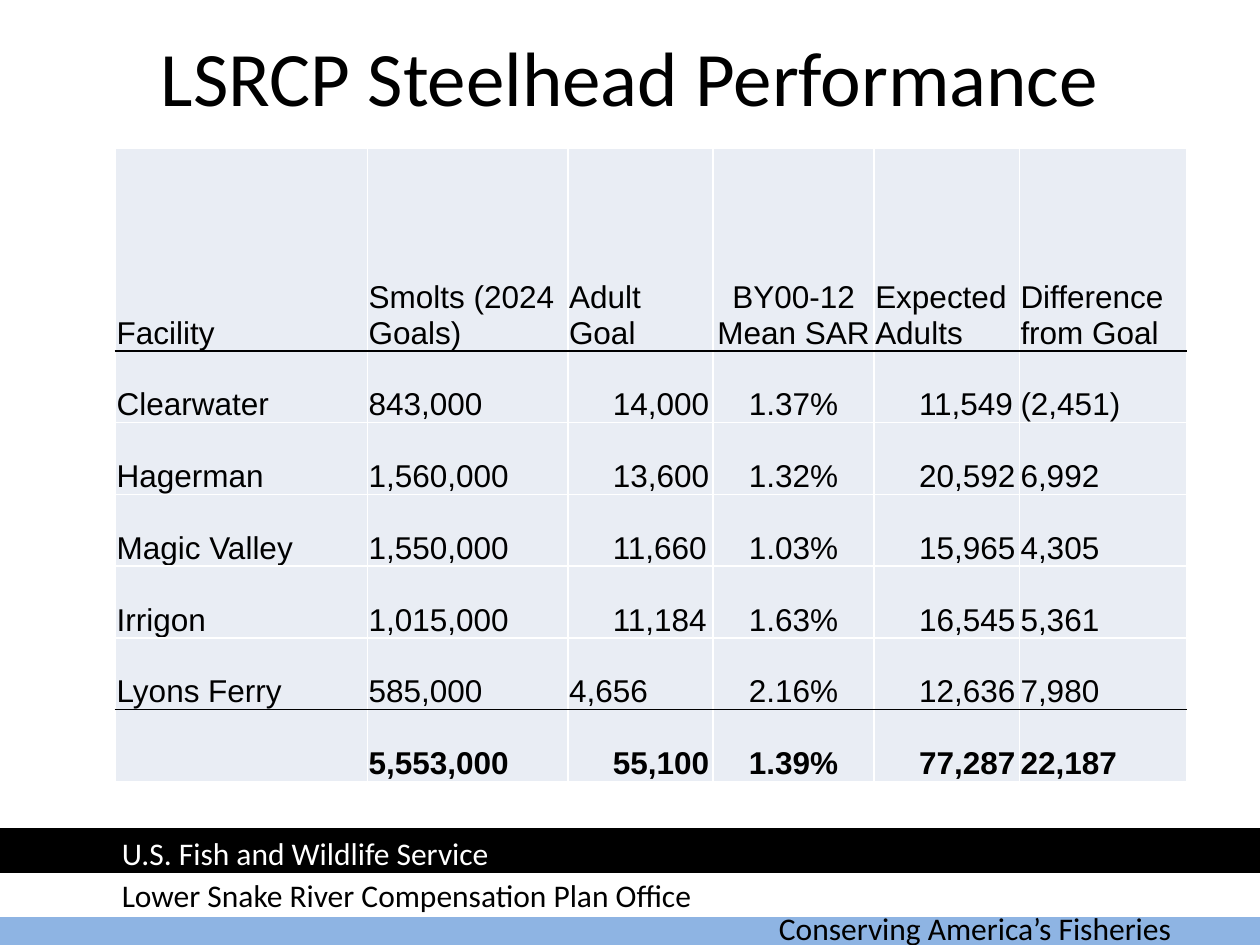
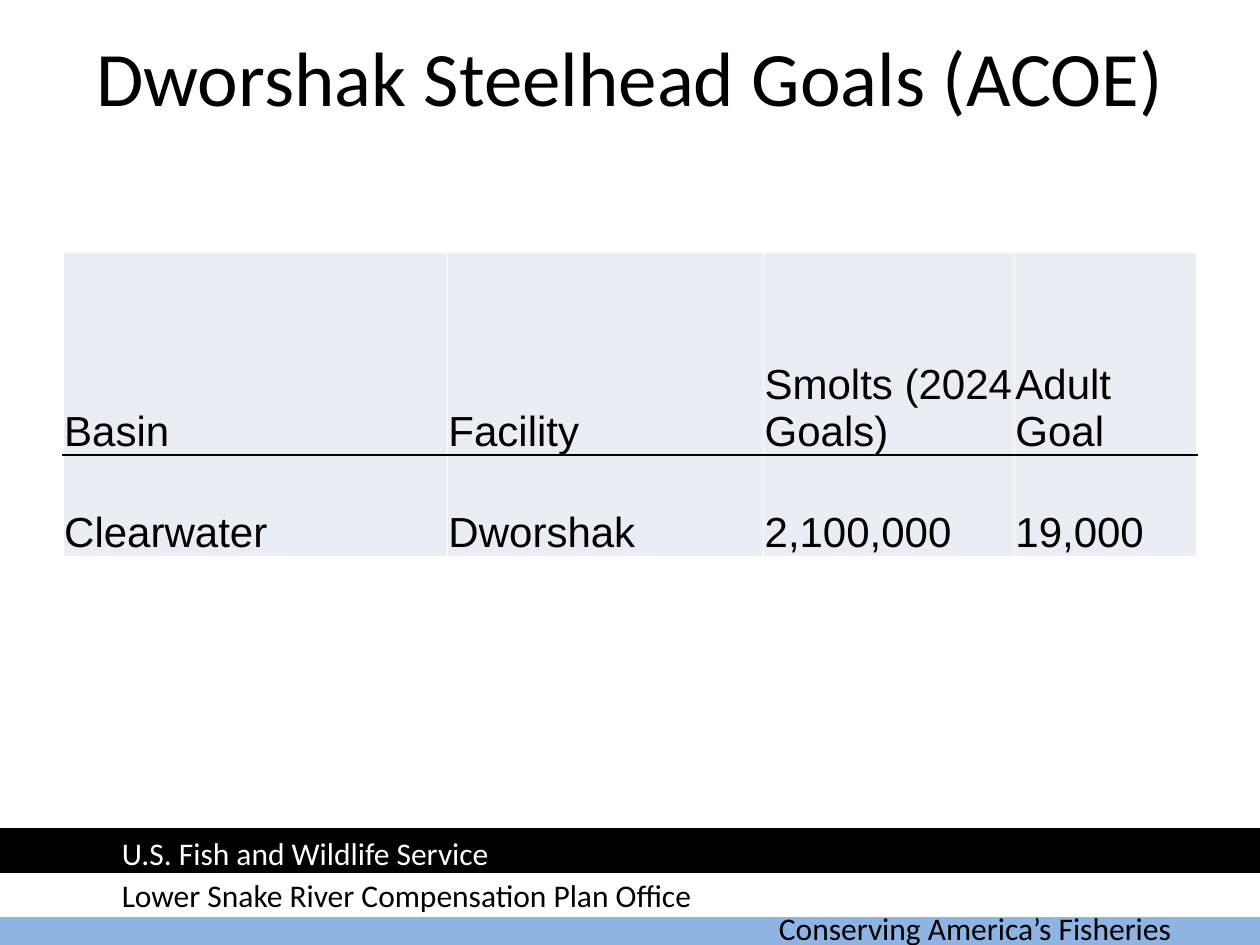
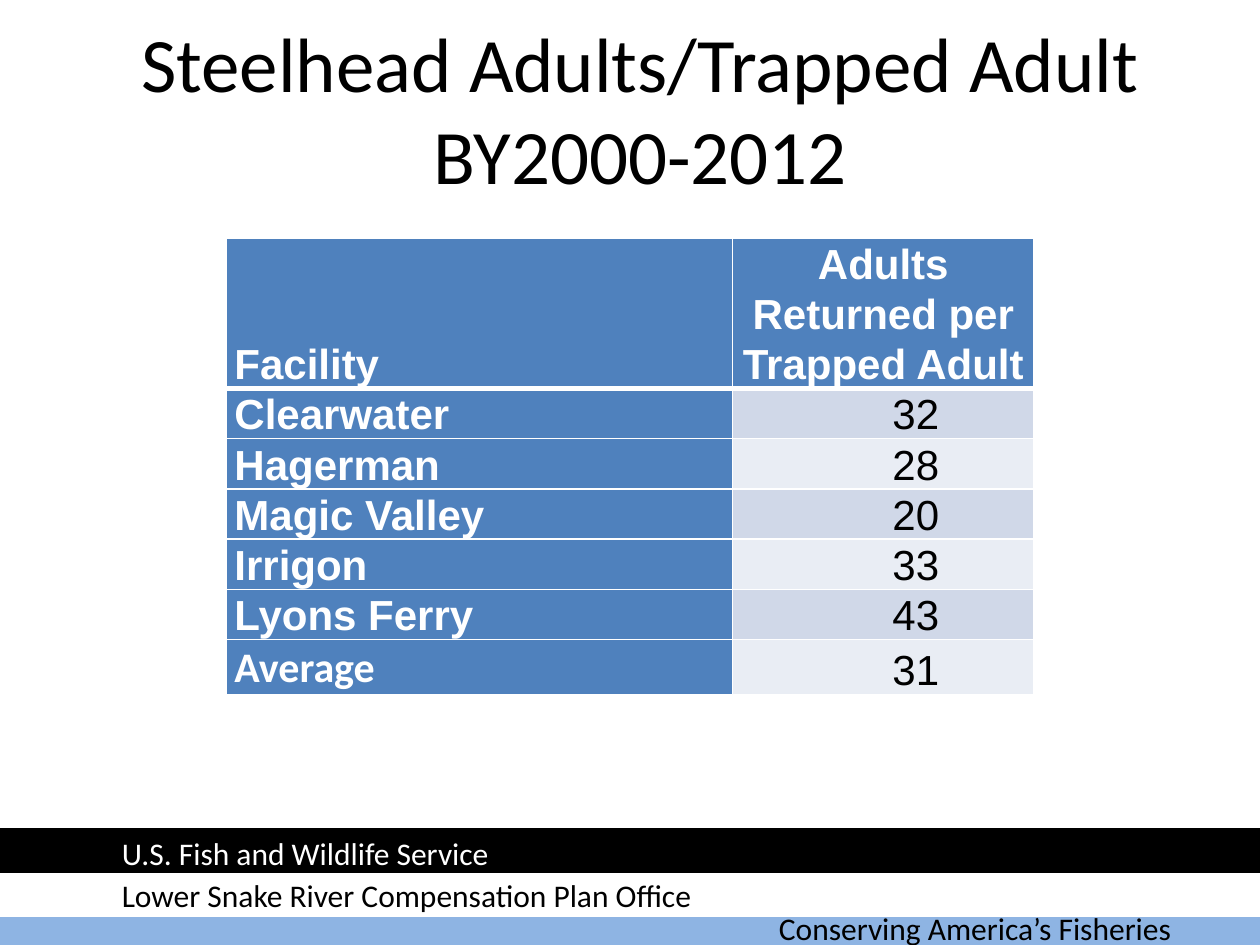
from dataclasses import dataclass, replace
from typing import Any, Callable, NamedTuple

import lxml.etree
import pptx
import pptx.dml.color
import pptx.enum.shapes
import pptx.enum.text
import pptx.oxml.ns
import pptx.util

Pt = pptx.util.Pt
RGBColor = pptx.dml.color.RGBColor
Align = pptx.enum.text.PP_ALIGN
Anchor = pptx.enum.text.MSO_ANCHOR
AutoSize = pptx.enum.text.MSO_AUTO_SIZE

BLACK = RGBColor(0x00, 0x00, 0x00)
WHITE = RGBColor(0xFF, 0xFF, 0xFF)
SKY = RGBColor(0x8E, 0xB4, 0xE3)
BLUE = RGBColor(0x4F, 0x81, 0xBD)
PALE = RGBColor(0xE9, 0xED, 0xF4)
MIST = RGBColor(0xD0, 0xD8, 0xE8)
HEADING_FONT = "Calibri"
TABLE_FONT = "Arial"
TITLE_ONLY = 5


class Box(NamedTuple):
    left: float
    top: float
    width: float
    height: float

    def lengths(self) -> list[int]:
        return [Pt(value) for value in self]


class Band(NamedTuple):
    box: Box
    color: RGBColor


class Label(NamedTuple):
    text: str
    box: Box
    color: RGBColor


class Rule(NamedTuple):
    color: RGBColor
    width: float


@dataclass(frozen=True)
class CellStyle:
    size: float
    fill: RGBColor = PALE
    color: RGBColor = BLACK
    font: str = TABLE_FONT
    bold: bool = False
    align: Align = Align.LEFT
    indent: float = 0
    line_spacing: float = 1.0
    margins: tuple[float, float] = (0.7, 0.7)


@dataclass(frozen=True)
class TableSlide:
    title: str
    title_box: Box
    left: float
    top: float
    widths: list[float]
    heights: list[float]
    rows: list[list[str]]
    rules: dict[int, Rule]
    style: Callable[[int, int, str], CellStyle]


BANDS = [
    Band(Box(-0.5, 516, 720, 24), SKY),
    Band(Box(0, 499, 720, 24), WHITE),
    Band(Box(0, 474, 720, 24), BLACK),
]
LABELS = [
    Label("Conserving America’s Fisheries", Box(438, 516, 264, 29), BLACK),
    Label("U.S. Fish and Wildlife Service", Box(62.5, 473, 300, 29), WHITE),
    Label("Lower Snake River Compensation Plan Office", Box(62.5, 497, 358, 29), BLACK),
]
TITLE_BOX = Box(36, 12, 648, 63)
GRID_RULE = Rule(WHITE, 1)
BLACK_RULE = Rule(BLACK, 1)
HEADER_RULE = Rule(WHITE, 3)


def performance_style(row: int, column: int, text: str) -> CellStyle:
    indented = row > 0 and column in (2, 4) and len(text) == len("14,000")
    return CellStyle(
        size=18,
        bold=row == 6,
        align=Align.CENTER if column == 3 else Align.LEFT,
        indent=25 if indented else 0,
    )


def goals_style(row: int, column: int, text: str) -> CellStyle:
    return CellStyle(size=24)


def trapped_style(row: int, column: int, text: str) -> CellStyle:
    base = CellStyle(size=24, line_spacing=1.07, margins=(5, 0))
    if row and column:
        return replace(base, fill=MIST if row % 2 else PALE, indent=86.5)
    return replace(
        base,
        fill=BLUE,
        color=WHITE,
        bold=True,
        font=HEADING_FONT if text == "Average" else TABLE_FONT,
        align=Align.CENTER if column else Align.LEFT,
    )


TABLE_SLIDES = [
    TableSlide(
        title="LSRCP Steelhead Performance",
        title_box=TITLE_BOX,
        left=66,
        top=84.5,
        widths=[144, 114.5, 83, 92, 83, 95.5],
        heights=[116] + [41] * 6,
        rows=[
            ["Facility", "Smolts (2024 Goals)", "Adult Goal", "BY00-12 Mean SAR",
             "Expected Adults", "Difference from Goal"],
            ["Clearwater", "843,000", "14,000", "1.37%", "11,549", "(2,451)"],
            ["Hagerman", "1,560,000", "13,600", "1.32%", "20,592", "6,992"],
            ["Magic Valley", "1,550,000", "11,660", "1.03%", "15,965", "4,305"],
            ["Irrigon", "1,015,000", "11,184", "1.63%", "16,545", "5,361"],
            ["Lyons Ferry", "585,000", "4,656", "2.16%", "12,636", "7,980"],
            ["", "5,553,000", "55,100", "1.39%", "77,287", "22,187"],
        ],
        rules={0: BLACK_RULE, 5: BLACK_RULE},
        style=performance_style,
    ),
    TableSlide(
        title="Dworshak Steelhead Goals (ACOE)",
        title_box=TITLE_BOX,
        left=36,
        top=144,
        widths=[219.6, 180.7, 143.3, 104.4],
        heights=[116, 58],
        rows=[
            ["Basin", "Facility", "Smolts (2024 Goals)", "Adult Goal"],
            ["Clearwater", "Dworshak", "2,100,000", "19,000"],
        ],
        rules={0: BLACK_RULE},
        style=goals_style,
    ),
    TableSlide(
        title="Steelhead Adults/Trapped Adult\vBY2000-2012",
        title_box=Box(42, 30, 648, 63),
        left=129,
        top=136,
        widths=[289.5, 172.5],
        heights=[86] + [28.7] * 5 + [30.5],
        rows=[
            ["Facility", "Adults Returned per Trapped Adult"],
            ["Clearwater", "32"],
            ["Hagerman", "28"],
            ["Magic Valley", "20"],
            ["Irrigon", "33"],
            ["Lyons Ferry", "43"],
            ["Average", "31"],
        ],
        rules={0: HEADER_RULE},
        style=trapped_style,
    ),
]


def write_text(
    text_frame: Any,
    text: str,
    *,
    size: float,
    color: RGBColor,
    font: str = HEADING_FONT,
    bold: bool = False,
    align: Align = Align.LEFT,
    indent: float = 0,
    line_spacing: float = 1.0,
) -> None:
    text_frame.word_wrap = True
    paragraph = text_frame.paragraphs[0]
    paragraph.text = text
    paragraph.alignment = align
    paragraph.line_spacing = line_spacing
    if indent:
        paragraph._p.get_or_add_pPr().set("marL", str(Pt(indent)))
    for run in paragraph.runs:
        run.font.size = Pt(size)
        run.font.name = font
        run.font.bold = bold
        run.font.color.rgb = color


def add_band(slide: Any, band: Band) -> Any:
    shape = slide.shapes.add_shape(
        pptx.enum.shapes.MSO_SHAPE.RECTANGLE, *band.box.lengths()
    )
    shape.shadow.inherit = False
    shape.fill.solid()
    shape.fill.fore_color.rgb = band.color
    shape.line.color.rgb = band.color
    shape.line.width = Pt(2)
    return shape


def add_label(slide: Any, label: Label) -> Any:
    shape = slide.shapes.add_textbox(*label.box.lengths())
    write_text(shape.text_frame, label.text, size=18, color=label.color)
    shape.text_frame.auto_size = AutoSize.SHAPE_TO_FIT_TEXT
    return shape


def move_footer_to_master(presentation: Any, slide: Any) -> None:
    footer = [add_band(slide, band) for band in BANDS]
    footer += [add_label(slide, label) for label in LABELS]
    master_tree = presentation.slide_master.shapes._spTree
    for position, shape in enumerate(footer, start=2):
        master_tree.insert(position, shape._element)


def set_border(cell: Any, position: int, side: str, rule: Rule) -> None:
    qualified = pptx.oxml.ns.qn
    line = lxml.etree.Element(qualified(f"a:ln{side}"), w=str(Pt(rule.width)))
    fill = lxml.etree.SubElement(line, qualified("a:solidFill"))
    lxml.etree.SubElement(fill, qualified("a:srgbClr"), val=str(rule.color))
    cell._tc.get_or_add_tcPr().insert(position, line)


def format_cell(cell: Any, text: str, style: CellStyle, borders: dict[str, Rule]) -> None:
    side_margin, top_margin = style.margins
    cell.margin_left = cell.margin_right = Pt(side_margin)
    cell.margin_top = Pt(top_margin)
    cell.margin_bottom = Pt(0)
    cell.vertical_anchor = Anchor.BOTTOM
    cell.fill.solid()
    cell.fill.fore_color.rgb = style.fill
    write_text(
        cell.text_frame,
        text,
        size=style.size,
        color=style.color,
        font=style.font,
        bold=style.bold,
        align=style.align,
        indent=style.indent,
        line_spacing=style.line_spacing,
    )
    for position, (side, rule) in enumerate(borders.items()):
        set_border(cell, position, side, rule)


def add_title(slide: Any, text: str, box: Box) -> None:
    title = slide.shapes.title
    title.left, title.top, title.width, title.height = box.lengths()
    write_text(title.text_frame, text, size=44, color=BLACK, align=Align.CENTER)
    title.text_frame.vertical_anchor = Anchor.MIDDLE
    title.text_frame.auto_size = AutoSize.NONE


def add_data_table(slide: Any, content: TableSlide) -> None:
    box = Box(content.left, content.top, sum(content.widths), sum(content.heights))
    table = slide.shapes.add_table(
        len(content.heights), len(content.widths), *box.lengths()
    ).table
    table.first_row = table.horz_banding = False
    for column, width in zip(table.columns, content.widths):
        column.width = Pt(width)
    for row, height in zip(table.rows, content.heights):
        row.height = Pt(height)
    for row_index, texts in enumerate(content.rows):
        borders = {
            "L": GRID_RULE,
            "R": GRID_RULE,
            "T": content.rules.get(row_index - 1, GRID_RULE),
            "B": content.rules.get(row_index, GRID_RULE),
        }
        for column_index, text in enumerate(texts):
            style = content.style(row_index, column_index, text)
            format_cell(table.cell(row_index, column_index), text, style, borders)


def main() -> None:
    presentation = pptx.Presentation()
    presentation.slide_width = Pt(720)
    presentation.slide_height = Pt(540)
    layout = presentation.slide_layouts[TITLE_ONLY]
    slides = [presentation.slides.add_slide(layout) for _ in TABLE_SLIDES]
    move_footer_to_master(presentation, slides[0])
    for slide, content in zip(slides, TABLE_SLIDES):
        add_title(slide, content.title, content.title_box)
        add_data_table(slide, content)
    presentation.save("out.pptx")


if __name__ == "__main__":
    main()
